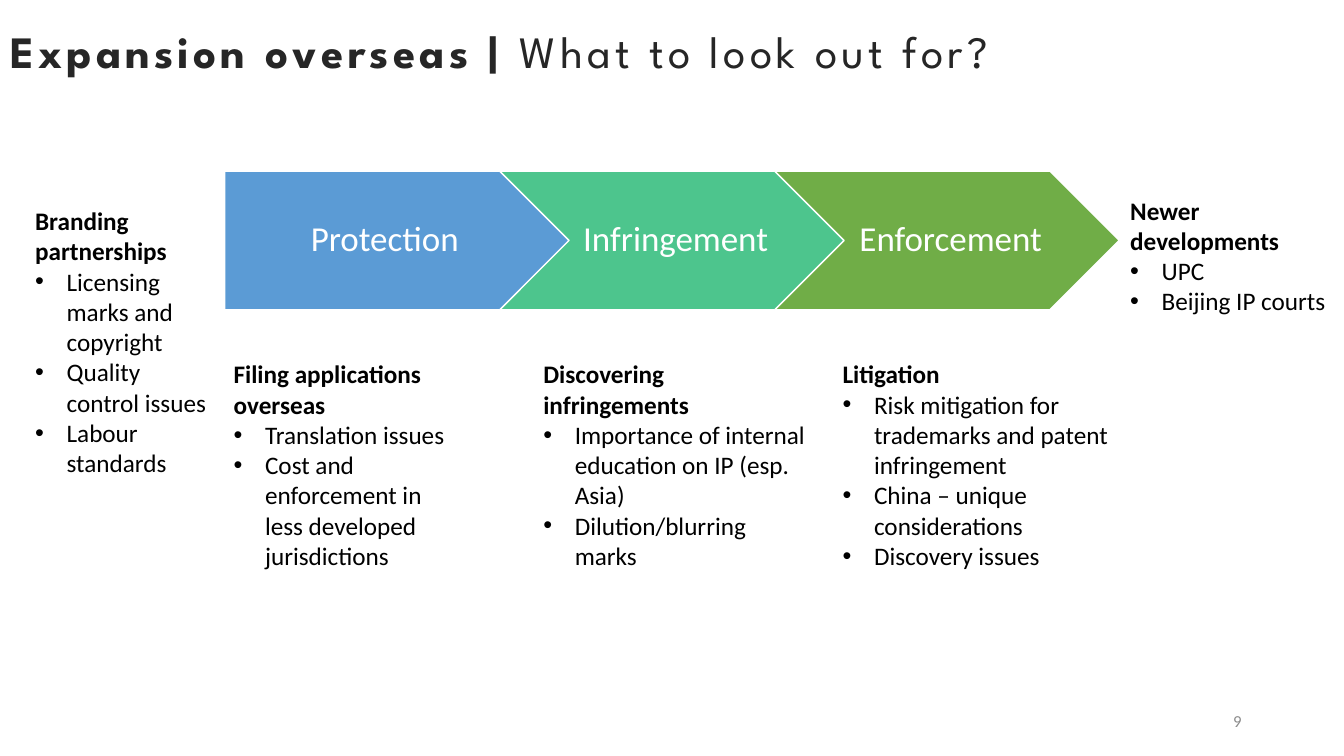
from lxml import etree
from pptx import Presentation
from pptx.dml.color import RGBColor
from pptx.enum.shapes import MSO_SHAPE
from pptx.enum.text import MSO_ANCHOR, MSO_AUTO_SIZE, PP_ALIGN
from pptx.oxml.ns import qn
from pptx.util import Pt

PENTAGON, CHEVRON = MSO_SHAPE.PENTAGON, MSO_SHAPE.CHEVRON
TOP, MIDDLE = MSO_ANCHOR.TOP, MSO_ANCHOR.MIDDLE
LEFT, CENTER, RIGHT = PP_ALIGN.LEFT, PP_ALIGN.CENTER, PP_ALIGN.RIGHT
NO_FIT = MSO_AUTO_SIZE.NONE

PX = 9525
SLIDE_W, SLIDE_H = 1280, 720
BODY_FONT, TITLE_FONT = "Calibri", "League Spartan"
COLORS = {
    "title": "262626",
    "text": "000000",
    "number": "8C8C8C",
    "white": "FFFFFF",
    "blue": "5B9BD5",
    "teal": "4DC58D",
    "green": "70AD47",
}

TITLE_PARTS = [("Expansion overseas | ", True), ("What to look out for?", False)]
TITLE_BOX = (0, 18, 1260, 61)
PAGE_NUMBER = "9"
NUMBER_BOX = (904, 667, 288, 38)

STAGES = [
    ("Protection", PENTAGON, "blue", 14),
    ("Infringement", CHEVRON, "teal", 11),
    ("Enforcement", CHEVRON, "green", 11),
]
STAGE_X, STAGE_Y, STAGE_W, STAGE_H, STAGE_STEP = 214, 163, 328, 132, 262

TOPICS = [
    ((24, 191, 190, 272), "Branding partnerships",
     ["Licensing marks and copyright", "Quality control issues", "Labour standards"]),
    ((213, 337, 238, 213), "Filing applications overseas",
     ["Translation issues", "Cost and enforcement in less developed jurisdictions"]),
    ((508, 337, 271, 242), "Discovering infringements",
     ["Importance of internal education on IP (esp. Asia)", "Dilution/blurring marks"]),
    ((793, 337, 330, 242), "Litigation",
     ["Risk mitigation for trademarks and patent infringement",
      "China – unique considerations", "Discovery issues"]),
    ((1067, 181, 213, 156), "Newer developments", ["UPC", "Beijing IP courts"]),
]
BULLET_INDENT = 30


def emu(box):
    return [length * PX for length in box]


def style(run, size, color, bold=False, font=BODY_FONT):
    run.font.name = font
    run.font.size = Pt(size)
    run.font.bold = bold
    run.font.color.rgb = RGBColor.from_string(COLORS[color])


def add_bullet(paragraph):
    properties = paragraph._p.get_or_add_pPr()
    properties.set("marL", str(BULLET_INDENT * PX))
    properties.set("indent", str(-BULLET_INDENT * PX))
    etree.SubElement(properties, qn("a:buFont")).set("typeface", "Arial")
    etree.SubElement(properties, qn("a:buChar")).set("char", "•")


def add_number(slide):
    frame = slide.shapes.add_textbox(*emu(NUMBER_BOX)).text_frame
    frame.word_wrap = True
    frame.vertical_anchor = MIDDLE
    frame.text = PAGE_NUMBER
    frame.paragraphs[0].alignment = RIGHT
    style(frame.paragraphs[0].runs[0], 12, "number")


def fill_title(slide):
    title = slide.shapes.title
    title.left, title.top, title.width, title.height = emu(TITLE_BOX)
    frame = title.text_frame
    frame.auto_size = NO_FIT
    frame.vertical_anchor = TOP
    heading = frame.paragraphs[0]
    heading.alignment = LEFT
    for words, bold in TITLE_PARTS:
        run = heading.add_run()
        run.text = words
        style(run, 32, "title", bold, TITLE_FONT)
        run.font._element.set("spc", "300")


def add_stage(slide, index, label, outline, color, inset):
    box = (STAGE_X + index * STAGE_STEP, STAGE_Y, STAGE_W, STAGE_H)
    stage = slide.shapes.add_shape(outline, *emu(box))
    stage.shadow.inherit = False
    stage.fill.solid()
    stage.fill.fore_color.rgb = RGBColor.from_string(COLORS[color])
    stage.line.color.rgb = RGBColor.from_string(COLORS["white"])
    stage.line.width = Pt(1)
    frame = stage.text_frame
    frame.word_wrap = True
    frame.vertical_anchor = MIDDLE
    frame.margin_left, frame.margin_top, frame.margin_right, frame.margin_bottom = emu(
        (inset, 7, 4, 7))
    frame.text = label
    frame.paragraphs[0].alignment = CENTER
    frame.paragraphs[0].line_spacing = 0.9
    style(frame.paragraphs[0].runs[0], 25, "white")


def add_topic(slide, box, heading, points):
    frame = slide.shapes.add_textbox(*emu(box)).text_frame
    frame.word_wrap = True
    frame.text = "\n".join([heading, *points])
    for index, paragraph in enumerate(frame.paragraphs):
        style(paragraph.runs[0], 18, "text", bold=index == 0)
        if index:
            add_bullet(paragraph)


def main():
    deck = Presentation()
    deck.slide_width, deck.slide_height = emu((SLIDE_W, SLIDE_H))
    slide = deck.slides.add_slide(deck.slide_layouts[5])
    add_number(slide)
    fill_title(slide)
    for index, stage in enumerate(STAGES):
        add_stage(slide, index, *stage)
    for topic in TOPICS:
        add_topic(slide, *topic)
    deck.save("out.pptx")


if __name__ == "__main__":
    main()
